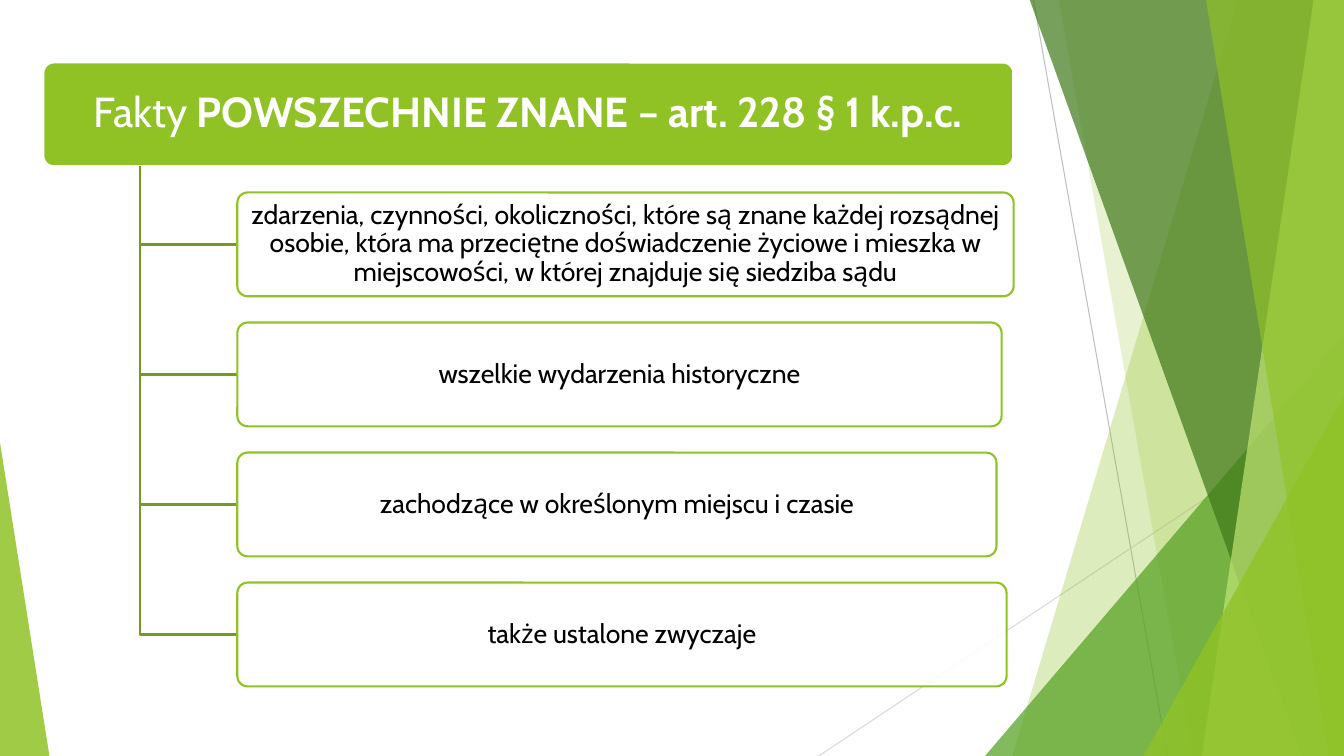
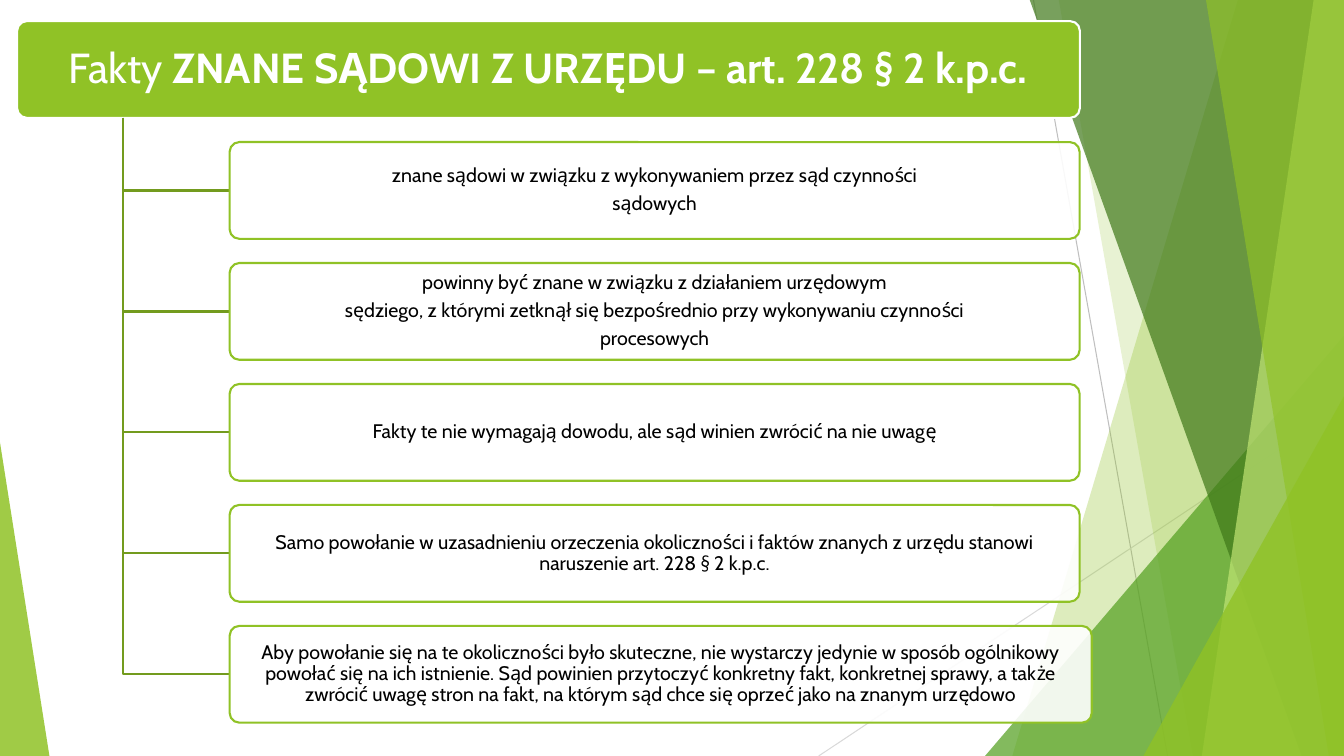
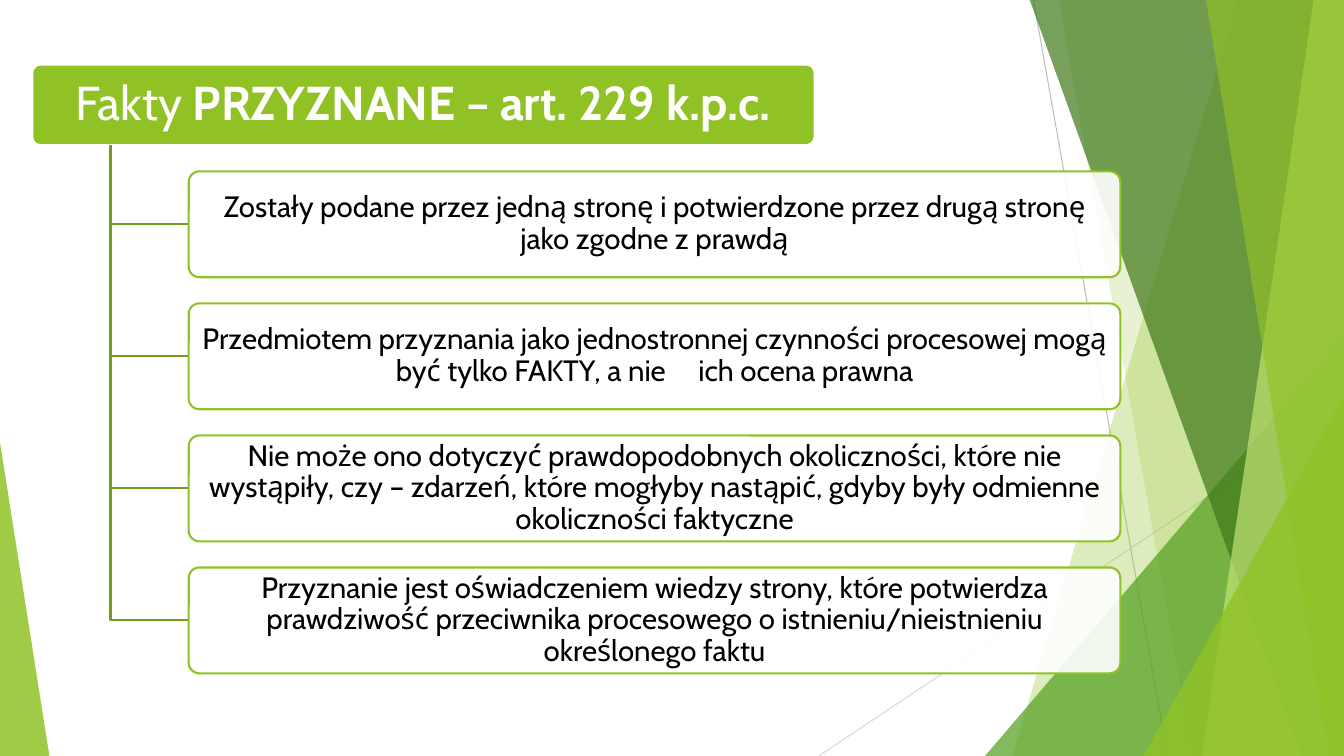
from lxml import etree
from pptx import Presentation
from pptx.dml.color import RGBColor
from pptx.enum.shapes import MSO_CONNECTOR, MSO_SHAPE
from pptx.enum.text import MSO_ANCHOR, PP_ALIGN
from pptx.oxml.ns import qn
from pptx.util import Inches, Pt

LINE = MSO_CONNECTOR.STRAIGHT
TRIANGLE, ROUNDED = MSO_SHAPE.ISOSCELES_TRIANGLE, MSO_SHAPE.ROUNDED_RECTANGLE
MIDDLE, CENTER = MSO_ANCHOR.MIDDLE, PP_ALIGN.CENTER

FONT = "Cabin"
COLORS = {
    "lime": "90C226", "green": "54A021", "forest": "3F7819", "pale": "C0E474",
    "branch": "739B1E", "white": "FFFFFF", "black": "000000",
    "gray": "BFBFBF", "light_gray": "D9D9D9",
}


def paint(shape, fill=None, alpha=100, line=None):
    """Set fill with its opacity in percent, outline colour, and no shadow."""
    shape.shadow.inherit = False
    if fill:
        shape.fill.solid()
        shape.fill.fore_color.rgb = RGBColor.from_string(COLORS[fill])
        if alpha < 100:
            color = shape.fill._xPr.find(qn("a:solidFill"))[0]
            etree.SubElement(color, qn("a:alpha"), val=str(alpha * 1000))
    else:
        shape.fill.background()
    if line:
        shape.line.color.rgb = RGBColor.from_string(COLORS[line])
        shape.line.width = Pt(1.5)
    else:
        shape.line.fill.background()


def write(shape, paragraphs, size, color, inset):
    """Fill a shape with paragraphs, each a list of (text, bold) runs."""
    tf = shape.text_frame
    tf.word_wrap = True
    tf.vertical_anchor = MIDDLE
    tf.margin_left = tf.margin_right = Inches(inset)
    tf.margin_top = tf.margin_bottom = Inches(inset - 0.01)
    for i, runs in enumerate(paragraphs):
        p = tf.paragraphs[0] if i == 0 else tf.add_paragraph()
        p.alignment = CENTER
        p.line_spacing = 0.9
        p.space_after = Pt(round(0.35 * size))
        for text, bold in runs:
            r = p.add_run()
            r.text = text
            r.font.name = FONT
            r.font.size = Pt(size)
            r.font.bold = bold
            r.font.color.rgb = RGBColor.from_string(COLORS[color])


# header: left, top, width, height; boxes: width and paragraphs of each
TREES = [
    {
        "title": "POWSZECHNIE ZNANE – art. 228 § 1 k.p.c.", "title_size": 30,
        "header": (0.43, 0.62, 9.62, 1.03),
        "top": 1.91, "height": 1.03, "pitch": 1.29, "size": 19, "inset": 0.04,
        "boxes": [
            (7.7, ["zdarzenia, czynności, okoliczności, które są znane każdej rozsądnej "
                   "osobie, która ma przeciętne doświadczenie życiowe i mieszka w "
                   "miejscowości, w której znajduje się siedziba sądu"]),
            (7.58, ["wszelkie wydarzenia historyczne"]),
            (7.53, ["zachodzące w określonym miejscu i czasie"]),
            (7.63, ["także ustalone zwyczaje"]),
        ],
    },
    {
        "title": "ZNANE SĄDOWI Z URZĘDU – art. 228 § 2 k.p.c.", "title_size": 30,
        "header": (0.17, 0.21, 10.54, 0.96),
        "top": 1.41, "height": 0.96, "pitch": 1.2, "size": 14, "inset": 0.03,
        "boxes": [
            (8.43, ["znane sądowi w związku z wykonywaniem przez sąd czynności",
                    "sądowych"]),
            (8.43, ["powinny być znane w związku z działaniem urzędowym",
                    "sędziego, z którymi zetknął się bezpośrednio przy wykonywaniu czynności",
                    "procesowych"]),
            (8.43, ["Fakty te nie wymagają dowodu, ale sąd winien zwrócić na nie uwagę"]),
            (8.43, ["Samo powołanie w uzasadnieniu orzeczenia okoliczności i faktów "
                    "znanych z urzędu stanowi naruszenie art. 228 § 2 k.p.c."]),
            (8.55, ["Aby powołanie się na te okoliczności było skuteczne, nie wystarczy "
                    "jedynie w sposób ogólnikowy powołać się na ich istnienie. Sąd powinien "
                    "przytoczyć konkretny fakt, konkretnej sprawy, a także zwrócić uwagę "
                    "stron na fakt, na którym sąd chce się oprzeć jako na znanym urzędowo"]),
        ],
    },
    {
        "title": "PRZYZNANE – art. 229 k.p.c.", "title_size": 34,
        "header": (0.32, 0.64, 7.76, 0.8),
        "top": 1.7, "height": 1.05, "pitch": 1.31, "size": 21, "inset": 0.04,
        "boxes": [
            (9.24, ["Zostały podane przez jedną stronę i potwierdzone przez drugą stronę "
                    "jako zgodne z prawdą"]),
            (9.24, ["Przedmiotem przyznania jako jednostronnej czynności procesowej mogą "
                    "być tylko FAKTY, a nie\tich ocena prawna"]),
            (9.24, ["Nie może ono dotyczyć prawdopodobnych okoliczności, które nie "
                    "wystąpiły, czy – zdarzeń, które mogłyby nastąpić, gdyby były odmienne "
                    "okoliczności faktyczne"]),
            (9.24, ["Przyznanie jest oświadczeniem wiedzy strony, które potwierdza "
                    "prawdziwość przeciwnika procesowego o istnieniu/nieistnieniu "
                    "określonego faktu"]),
        ],
    },
]

prs = Presentation()
prs.slide_width, prs.slide_height = Inches(13.33), Inches(7.5)
blank = prs.slide_layouts[6]
slides = [prs.slides.add_slide(blank) for _ in TREES]

# Shared backdrop: drawn on the first slide, then moved to the layout
s = slides[0]
for x1, y1, x2, y2, color in [(10.25, 0, 11.58, 7.5, "gray"),
                              (13.33, 4.03, 8.12, 7.5, "light_gray")]:
    ray = s.shapes.add_connector(LINE, Inches(x1), Inches(y1), Inches(x2), Inches(y2))
    ray.line.color.rgb = RGBColor.from_string(COLORS[color])
    ray.line.width = Pt(0.75)
    etree.SubElement(ray.element.spPr, qn("a:effectLst"))

# Bands reach the right edge: (top x, bottom x); triangles: (left, top, width, apex)
for points, fill, alpha in [
    ((12.28, 10.04), "lime", 30),
    ((10.5, 11.83), "lime", 20),
    ((9.77, 3.33, 3.56, 1), "green", 72),
    ((10.21, 12.91), "forest", 70),
    ((13.03, 11.92), "pale", 70),
    ((11.96, 13.18), "lime", 65),
    ((11.34, 3.93, 1.99, 1), "lime", 80),
    ((0, 4.39, 0.49, 0), "lime", 85),
]:
    if len(points) == 2:
        top_x, bottom_x = points
        outline = s.shapes.build_freeform(Inches(top_x), Inches(-0.01))
        outline.add_line_segments([(Inches(x), Inches(y)) for x, y in
                                   [(13.33, -0.01), (13.33, 7.5), (bottom_x, 7.5)]])
        facet = outline.convert_to_shape()
    else:
        left, top, width, apex = points
        facet = s.shapes.add_shape(TRIANGLE, Inches(left), Inches(top),
                                   Inches(width), Inches(7.5 - top))
        facet.adjustments[0] = apex
    paint(facet, fill, alpha)

for shape in list(s.shapes):
    blank.shapes.element.append(shape.element)

for s, tree in zip(slides, TREES):
    left, top, width, height = tree["header"]
    header = s.shapes.add_shape(ROUNDED, *map(Inches, tree["header"]))
    header.adjustments[0] = 0.1
    paint(header, "lime", line="white")
    write(header, [[("Fakty ", False), (tree["title"], True)]],
          size=tree["title_size"], color="white", inset=0.06)

    trunk_x, box_x = left + 0.1 * width, left + 0.2 * width
    for i, (box_width, paragraphs) in enumerate(tree["boxes"]):
        box_y = tree["top"] + i * tree["pitch"]
        middle = Inches(box_y + tree["height"] / 2)
        outline = s.shapes.build_freeform(Inches(trunk_x), Inches(top + height))
        outline.add_line_segments([(Inches(trunk_x), middle), (Inches(box_x), middle)],
                                  close=False)
        paint(outline.convert_to_shape(), line="branch")

        box = s.shapes.add_shape(ROUNDED, Inches(box_x), Inches(box_y),
                                 Inches(box_width), Inches(tree["height"]))
        box.adjustments[0] = 0.1
        paint(box, "white", 90, line="lime")
        write(box, [[(text, False)] for text in paragraphs],
              size=tree["size"], color="black", inset=tree["inset"])

prs.save("out.pptx")
